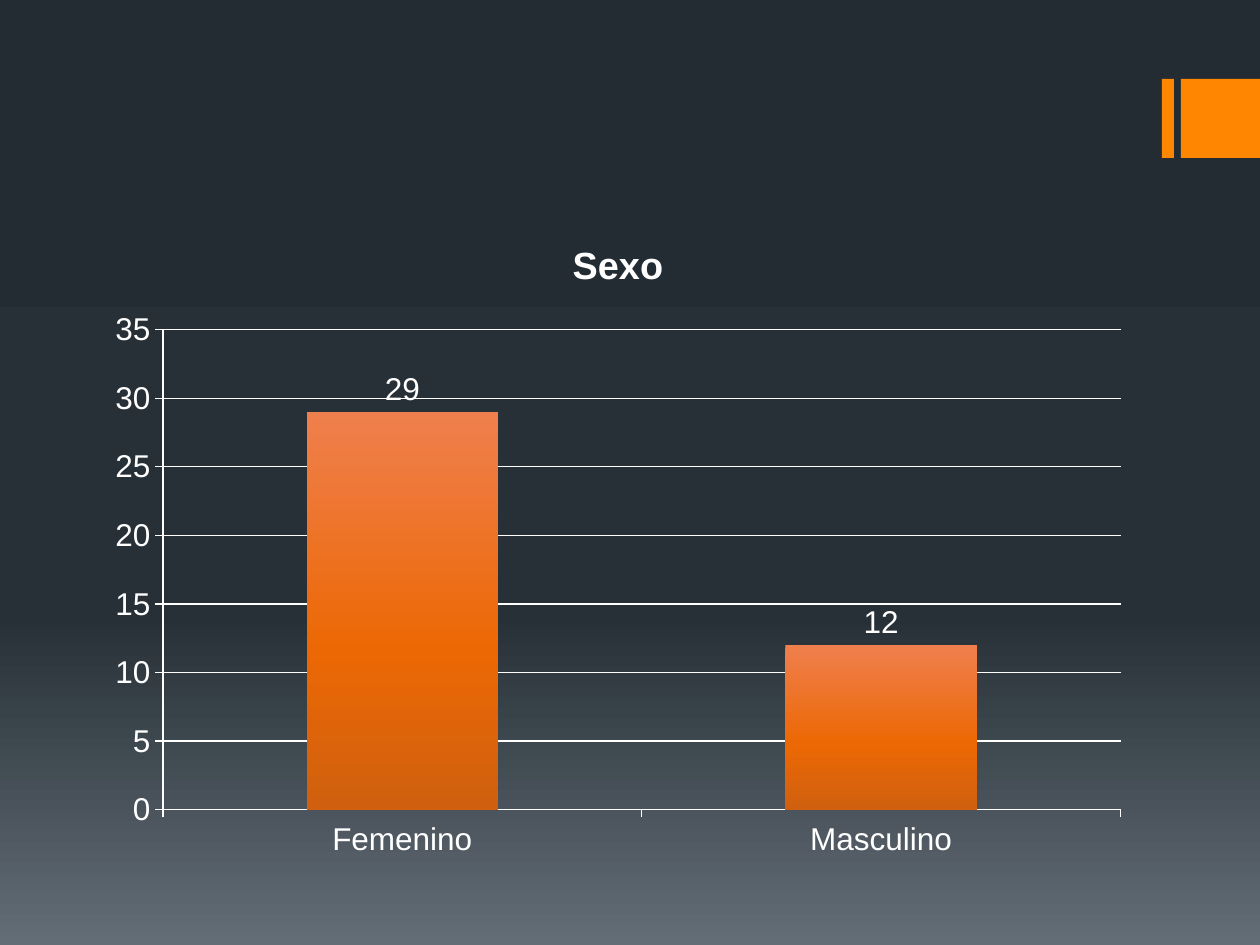
from lxml.etree import SubElement as Sub
from pptx import Presentation
from pptx.chart.data import CategoryChartData as Data
from pptx.dml.color import RGBColor as RGB
from pptx.enum.chart import XL_CHART_TYPE as Kind, XL_LABEL_POSITION as Pos
from pptx.enum.chart import XL_TICK_MARK as Tick
from pptx.enum.shapes import MSO_SHAPE as Shape
from pptx.oxml.ns import qn
from pptx.util import Pt

HUES = {"text": "FFFFFF", "accent": "FF8600"}
BACK = [(0, "242C33"), (65, "273037"), (100, "636D76")]
BARS = [(0, "EF7F4D"), (60, "EC6804"), (100, "D0600F")]


def style(font, size=18, bold=False, hue="text"):
    """Format a font."""
    font.name, font.size, font.bold = "Arial", Pt(size), bold
    font.color.rgb = RGB.from_string(HUES[hue])


def write(frame, text, **form):
    """Put formatted text into a text frame."""
    run = frame.paragraphs[0].add_run()
    run.text = text
    style(run.font, **form)


def blend(fill, stops):
    """Fill from top to bottom through the given stops."""
    fill.gradient()
    fill.gradient_angle = 270
    root = fill.gradient_stops[0]._gs.getparent()
    for old in list(root):
        root.remove(old)
    for pos, hue in stops:
        stop = Sub(root, qn("a:gs"), pos=str(pos * 1000))
        Sub(stop, qn("a:srgbClr"), val=hue)


def block(slide, left, top, width, height):
    """Add a plain accent rectangle."""
    box = slide.shapes.add_shape(
        Shape.RECTANGLE, Pt(left), Pt(top), Pt(width), Pt(height))
    box.shadow.inherit = False
    box.fill.solid()
    box.fill.fore_color.rgb = RGB.from_string(HUES["accent"])
    box.line.fill.background()


def rule(line):
    """Draw a thin light line."""
    line.color.rgb = RGB.from_string(HUES["text"])
    line.width = Pt(0.75)


def graph(slide, title, cats, vals):
    """Add the column chart with its title and labels."""
    data = Data()
    data.categories = cats
    data.add_series("Series 1", vals)
    chart = slide.shapes.add_chart(
        Kind.COLUMN_CLUSTERED, Pt(54), Pt(122.4), Pt(598.3), Pt(375.1), data).chart
    style(chart.font)
    chart.has_legend = False
    chart.has_title = True
    write(chart.chart_title.text_frame, title, size=21.6, bold=True)
    chart.chart_title.include_in_layout = False
    for axis in (chart.category_axis, chart.value_axis):
        axis.major_tick_mark = Tick.OUTSIDE
        axis.minor_tick_mark = Tick.NONE
        style(axis.tick_labels.font)
        rule(axis.format.line)
    axis = chart.value_axis
    axis.minimum_scale, axis.maximum_scale, axis.major_unit = 0, 35, 5
    axis.has_major_gridlines = True
    rule(axis.major_gridlines.format.line)
    plot = chart.plots[0]
    plot.gap_width = 150
    plot.vary_by_categories = False
    blend(plot.series[0].format.fill, BARS)
    plot.has_data_labels = True
    tags = plot.data_labels
    tags.show_value = True
    tags.position = Pos.OUTSIDE_END
    style(tags.font)


def main():
    """Build and save the slide."""
    deck = Presentation()
    deck.slide_width, deck.slide_height = Pt(720), Pt(540)
    slide = deck.slides.add_slide(deck.slide_layouts[6])
    blend(slide.background.fill, BACK)
    for left, width in ((664, 6.8), (674.8, 45.2)):
        block(slide, left, 45, width, 45.2)
    graph(slide, "Sexo", ["Femenino", "Masculino"], [29, 12])
    deck.save("out.pptx")


if __name__ == "__main__":
    main()
